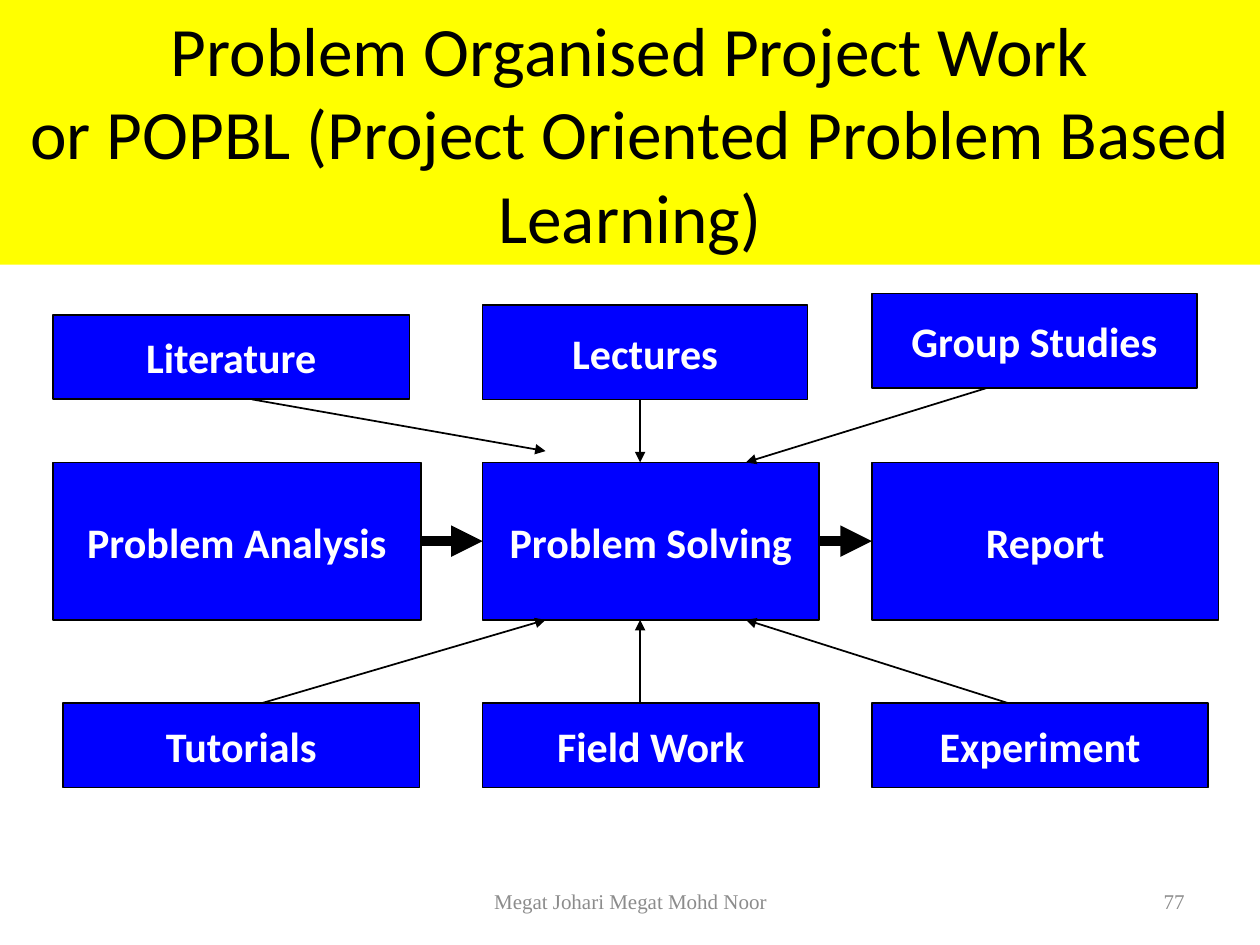
from dataclasses import dataclass

from pptx import Presentation
from pptx.dml.color import RGBColor
from pptx.enum.shapes import MSO_CONNECTOR, MSO_SHAPE
from pptx.enum.text import MSO_ANCHOR, PP_ALIGN
from pptx.oxml.ns import qn
from pptx.util import Inches, Pt
from lxml.etree import SubElement


@dataclass(frozen=True)
class Theme:
    yellow = RGBColor(0xFF, 0xFF, 0x00)
    blue = RGBColor(0x00, 0x00, 0xFF)
    black = RGBColor(0x00, 0x00, 0x00)
    white = RGBColor(0xFF, 0xFF, 0xFF)
    grey = RGBColor(0x8C, 0x8C, 0x8C)
    title = {"name": "Calibri", "size": Pt(39.6), "bold": False}
    label = {"name": "Calibri", "size": Pt(24), "bold": True}
    footer = {"name": "Times New Roman", "size": Pt(12)}
    thin, thick = Pt(1), Pt(6)


THEME = Theme()

# Label: left, top, width, height, measured from the diagram's corner
BOXES = {
    "Problem Analysis": (0, 1.34, 2.92, 1.25),
    "Problem Solving": (3.41, 1.34, 2.67, 1.25),
    "Report": (6.5, 1.34, 2.75, 1.25),
    "Literature": (0, 0.17, 2.83, 0.67),
    "Lectures": (3.41, 0.09, 2.58, 0.75),
    "Group Studies": (6.5, 0, 2.58, 0.75),
    "Tutorials": (0.08, 3.25, 2.83, 0.67),
    "Field Work": (3.41, 3.25, 2.67, 0.67),
    "Experiment": (6.5, 3.25, 2.67, 0.67),
}
STAGES = ["Problem Analysis", "Problem Solving", "Report"]

# Start x, start y, end x, end y of the arrows into Problem Solving
INPUT_ARROWS = [
    (1.66, 3.25, 3.91, 2.59),
    (1.58, 0.84, 3.91, 1.25),
    (4.66, 0.84, 4.66, 1.34),
    (4.66, 3.25, 4.66, 2.59),
    (7.58, 3.25, 5.5, 2.59),
    (7.41, 0.75, 5.5, 1.34),
]


def write_text(sp, text, font, color, align=PP_ALIGN.CENTER, wrap=True):
    tf = sp.text_frame
    tf.word_wrap = wrap
    tf.vertical_anchor = MSO_ANCHOR.MIDDLE
    p = tf.paragraphs[0]
    p.text = text
    p.alignment = align
    for r in p.runs:
        for key, value in font.items():
            setattr(r.font, key, value)
        r.font.color.rgb = color


def add_rect(s, box, fill):
    sp = s.shapes.add_shape(MSO_SHAPE.RECTANGLE, *map(Inches, box))
    sp.shadow.inherit = False
    sp.fill.solid()
    sp.fill.fore_color.rgb = fill
    return sp


def add_arrow(s, points, width):
    cn = s.shapes.add_connector(MSO_CONNECTOR.STRAIGHT, *map(Inches, points))
    cn.line.color.rgb = THEME.black
    cn.line.width = width
    SubElement(cn.line._get_or_add_ln(), qn("a:tailEnd"), type="triangle")
    SubElement(cn._element.spPr, qn("a:effectLst"))
    return cn


def add_title(s, box):
    sp = add_rect(s, box, THEME.yellow)
    sp.line.fill.background()
    text = ("Problem Organised Project Work\v"
            "or POPBL (Project Oriented Problem Based Learning)")
    write_text(sp, text, THEME.title, THEME.black)


def add_diagram(s, left, top):
    """Draw the three stages, their inputs and all arrows."""
    nodes = {}
    for label, (x, y, w, h) in BOXES.items():
        sp = add_rect(s, (left + x, top + y, w, h), THEME.blue)
        sp.line.color.rgb = THEME.black
        sp.line.width = THEME.thin
        write_text(sp, label, THEME.label, THEME.white, wrap=False)
        nodes[label] = sp

    for before, after in zip(STAGES, STAGES[1:]):
        cn = add_arrow(s, (0, 0, 0, 0), THEME.thick)
        cn.begin_connect(nodes[before], 3)
        cn.end_connect(nodes[after], 1)

    for x1, y1, x2, y2 in INPUT_ARROWS:
        add_arrow(s, (left + x1, top + y1, left + x2, top + y2), THEME.thin)


def add_footer(s, top, height):
    for text, left, width, align in (
        ("Megat Johari Megat Mohd Noor", 3.42, 3.17, PP_ALIGN.CENTER),
        ("77", 7.17, 2.33, PP_ALIGN.RIGHT),
    ):
        box = map(Inches, (left, top, width, height))
        sp = s.shapes.add_textbox(*box)
        write_text(sp, text, THEME.footer, THEME.grey, align)


def main():
    prs = Presentation()
    prs.slide_width, prs.slide_height = Inches(10), Inches(7.5)
    s = prs.slides.add_slide(prs.slide_layouts[6])
    add_footer(s, 6.95, 0.4)
    add_title(s, (0, 0, 10, 2.1))
    add_diagram(s, 0.42, 2.33)
    prs.save("out.pptx")


if __name__ == "__main__":
    main()
